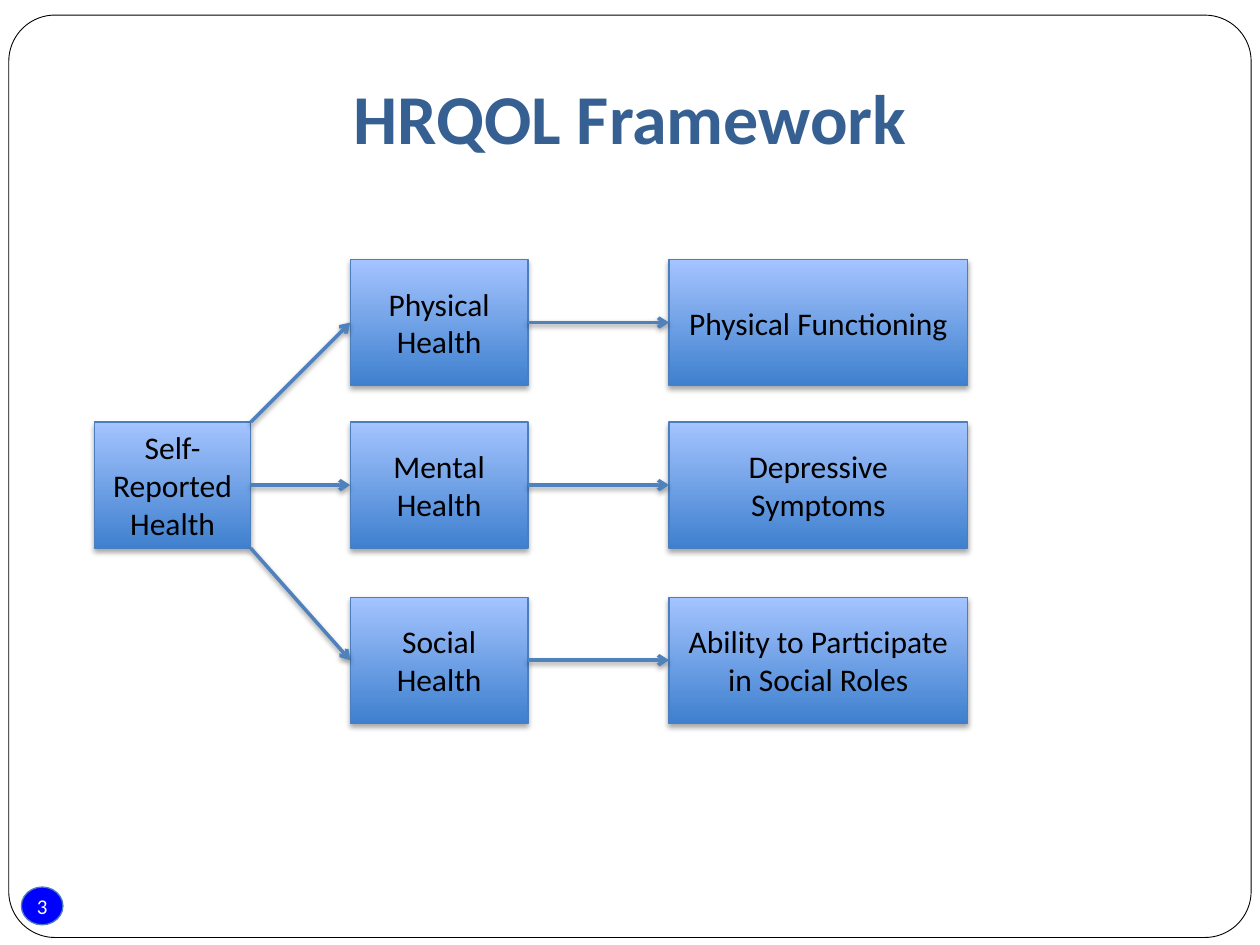
from dataclasses import dataclass

from lxml.etree import SubElement
from pptx import Presentation
from pptx.dml.color import RGBColor
from pptx.enum.shapes import MSO_CONNECTOR, MSO_SHAPE
from pptx.enum.text import MSO_ANCHOR, PP_ALIGN
from pptx.oxml.ns import qn
from pptx.util import Inches, Pt


@dataclass(frozen=True)
class Theme:
    """Colours, font and type sizes of the slide."""
    font: str = "Calibri"
    title: str = "376092"
    text: str = "000000"
    frame: str = "000000"
    badge: str = "0000FF"
    badge_text: str = "FFFFFF"
    edge: str = "4B7EBC"
    arrow: str = "4F81BD"
    grad: tuple = ("3F80CE", "A4C4FF")
    title_size: float = 40
    box_size: float = 18
    badge_size: float = 12


T = Theme()
RIGHT, LEFT = 3, 1
COLS = {"source": (0.75, 1.24), "domain": (2.78, 1.41), "measure": (5.31, 2.37)}
ROWS = (2.06, 3.35, 4.74)
ROW_H = 1
BRANCHES = (
    ("Physical Health", "Physical Functioning"),
    ("Mental Health", "Depressive Symptoms"),
    ("Social Health", "Ability to Participate in Social Roles"),
)


def rgb(code):
    """Turn a hex code into a colour."""
    return RGBColor.from_string(code)


def box_of(col, row):
    """Return left, top, width and height of a grid cell."""
    left, width = COLS[col]
    return left, ROWS[row], width, ROW_H


def write(sp, text, size, color, bold=False):
    """Set centred text in a shape."""
    tf = sp.text_frame
    tf.word_wrap = True
    tf.vertical_anchor = MSO_ANCHOR.MIDDLE
    p = tf.paragraphs[0]
    p.text = text
    p.alignment = PP_ALIGN.CENTER
    p.font.name, p.font.size, p.font.bold = T.font, Pt(size), bold
    p.font.color.rgb = rgb(color)


def outline(sp, color, width):
    """Set the line of a shape or connector."""
    sp.line.color.rgb = rgb(color)
    sp.line.width = Pt(width)


def drop_shadow(sp, dist, alpha):
    """Give a shape or connector a soft shadow straight below it."""
    effects = SubElement(sp._element.spPr, qn("a:effectLst"))
    shadow = SubElement(effects, qn("a:outerShdw"), blurRad=str(Pt(3.1)),
                        dist=str(Pt(dist)), dir="5400000", rotWithShape="0")
    color = SubElement(shadow, qn("a:srgbClr"), val="000000")
    SubElement(color, qn("a:alpha"), val=str(alpha * 1000))


def add_preset(s, kind, box):
    """Add a preset shape in the given box."""
    return s.shapes.add_shape(kind, *map(Inches, box))


def add_badge(s, box, number):
    """Draw the slide number in its ellipse."""
    sp = add_preset(s, MSO_SHAPE.OVAL, box)
    sp.shadow.inherit = False
    sp.fill.solid()
    sp.fill.fore_color.rgb = rgb(T.badge)
    outline(sp, T.edge, 0.75)
    tf = sp.text_frame
    tf.margin_left = tf.margin_right = tf.margin_top = tf.margin_bottom = 0
    write(sp, number, T.badge_size, T.badge_text)


def add_frame(s, box):
    """Draw the rounded border of the slide."""
    sp = add_preset(s, MSO_SHAPE.ROUNDED_RECTANGLE, box)
    sp.shadow.inherit = False
    sp.adjustments[0] = 0.05
    sp.fill.background()
    outline(sp, T.frame, 0.5)


def add_title(s, box, text):
    """Place the slide title."""
    write(s.shapes.add_textbox(*map(Inches, box)), text, T.title_size, T.title, True)


def add_box(s, box, text):
    """Draw one gradient box of the framework."""
    sp = add_preset(s, MSO_SHAPE.RECTANGLE, box)
    sp.fill.gradient()
    sp.fill.gradient_angle = 90
    for i, (stop, color) in enumerate(zip(sp.fill.gradient_stops, T.grad)):
        stop.position = i
        stop.color.rgb = rgb(color)
    outline(sp, T.edge, 0.75)
    drop_shadow(sp, 1.8, 35)
    write(sp, text, T.box_size, T.text)
    return sp


def add_arrow(s, start, end, share=0.5):
    """Join two boxes, leaving the right side at a share of its height."""
    c = s.shapes.add_connector(
        MSO_CONNECTOR.STRAIGHT, start.left + start.width,
        start.top + int(start.height * share), end.left, end.top + end.height // 2)
    if share == 0.5:
        c.begin_connect(start, RIGHT)
    c.end_connect(end, LEFT)
    outline(c, T.arrow, 2)
    SubElement(c.line._get_or_add_ln(), qn("a:tailEnd"), type="arrow")
    drop_shadow(c, 1.6, 38)


def add_framework(s):
    """Draw the source box and its three branches on the grid."""
    source = add_box(s, box_of("source", 1), "Self-Reported Health")
    for row, (domain, measure) in enumerate(BRANCHES):
        mid = add_box(s, box_of("domain", row), domain)
        end = add_box(s, box_of("measure", row), measure)
        add_arrow(s, source, mid, row / 2)
        add_arrow(s, mid, end)


def main():
    """Build and save the slide."""
    prs = Presentation()
    prs.slide_width, prs.slide_height = Inches(10), Inches(7.5)
    s = prs.slides.add_slide(prs.slide_layouts[6])
    add_badge(s, (0.17, 7.04, 0.33, 0.3), "3")
    add_frame(s, (0.07, 0.12, 9.86, 7.32))
    add_title(s, (0.5, 0.3, 9, 1.25), "HRQOL Framework")
    add_framework(s)
    prs.save("out.pptx")


if __name__ == "__main__":
    main()
